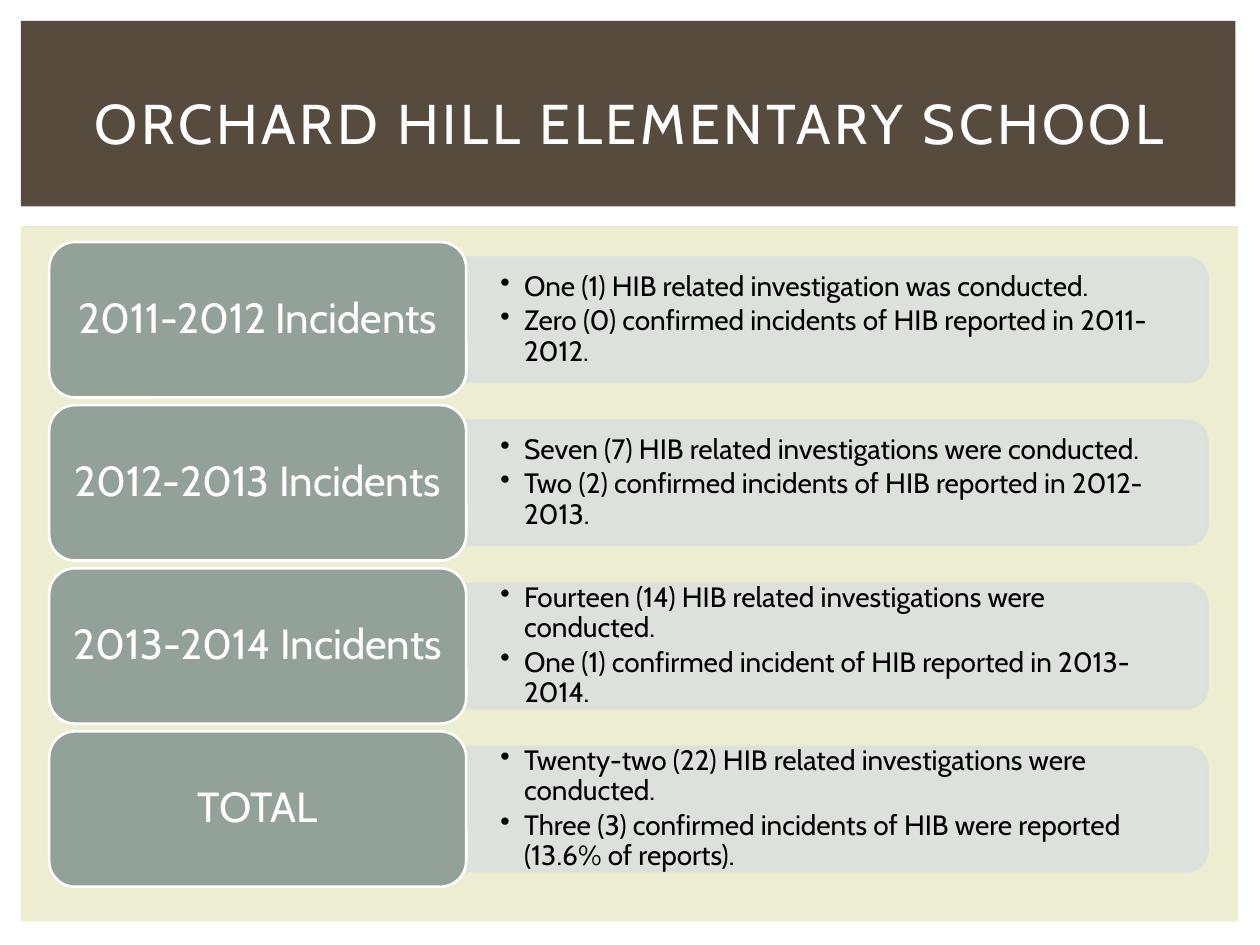
from pptx import Presentation
from pptx.dml.color import RGBColor
from pptx.enum.shapes import MSO_SHAPE
from pptx.enum.text import MSO_ANCHOR, MSO_AUTO_SIZE, PP_ALIGN
from pptx.oxml.ns import qn
from pptx.util import Pt
from lxml.etree import SubElement

THEME = {
    "font": "Cabin",
    "panel": "ECEDD1", "band": "564B3C", "card": "93A299", "bar": "DCE0DE",
    "light": "FFFFFF", "dark": "000000",
    "title": 32, "label": 24, "item": 16, "outline": 1.5,
}

ROWS = [
    ("2011-2012 Incidents", [
        "One (1) HIB related investigation was conducted.",
        "Zero (0) confirmed incidents of HIB reported in 2011-2012."]),
    ("2012-2013 Incidents", [
        "Seven (7) HIB related investigations were conducted.",
        "Two (2) confirmed incidents of HIB reported in 2012-2013."]),
    ("2013-2014 Incidents", [
        "Fourteen (14) HIB related investigations were conducted.",
        "One (1) confirmed incident of HIB reported in 2013-2014."]),
    ("TOTAL", [
        "Twenty-two (22) HIB related investigations were conducted.",
        "Three (3) confirmed incidents of HIB were reported (13.6% of reports)."]),
]


def add_box(kind, left, top, width, height, fill, line=None):
    sp = s.shapes.add_shape(kind, Pt(left), Pt(top), Pt(width), Pt(height))
    sp.shadow.inherit = False
    sp.fill.solid()
    sp.fill.fore_color.rgb = RGBColor.from_string(THEME[fill])
    if line:
        sp.line.color.rgb = RGBColor.from_string(THEME[line])
        sp.line.width = Pt(THEME["outline"])
    else:
        sp.line.fill.background()
    return sp


def write(p, text, size, color, **format_values):
    for name, value in format_values.items():
        setattr(p, name, value)
    r = p.add_run()
    r.text = text
    r.font.name = THEME["font"]
    r.font.size = Pt(THEME[size])
    r.font.color.rgb = RGBColor.from_string(THEME[color])
    return r


prs = Presentation()
prs.slide_width, prs.slide_height = Pt(720), Pt(540)
s = prs.slides.add_slide(prs.slide_layouts[5])

# Background panel and title band
add_box(MSO_SHAPE.RECTANGLE, 12, 129, 695.5, 397.5, "panel")
add_box(MSO_SHAPE.RECTANGLE, 12, 12, 694, 106, "band")

# Title, brought in front of the band
title = s.shapes.title
title.element.getparent().append(title.element)
title.left, title.top, title.width, title.height = Pt(30), Pt(28), Pt(660), Pt(83)
tf = title.text_frame
tf.auto_size = MSO_AUTO_SIZE.NONE
tf.vertical_anchor = MSO_ANCHOR.MIDDLE
r = write(tf.paragraphs[0], "ORCHARD HILL ELEMENTARY SCHOOL", "title", "light",
          alignment=PP_ALIGN.CENTER)
r.font._element.set("spc", "200")

# Rows: a label card on the left, a bar with a bulleted list on the right
card_left, card_top, card_w, card_h, pitch = 28.1, 138.3, 238.3, 88.8, 93.2
bar_left, bar_w, bar_h, list_w, list_h = 266.5, 423.5, 71, 420.5, 64
indent = Pt(13.5)

for i, (label, items) in enumerate(ROWS):
    top = card_top + i * pitch
    middle = top + card_h / 2

    # Bar, turned so that its rounded end points right
    bar = add_box(MSO_SHAPE.ROUND_2_SAME_RECTANGLE,
                  bar_left + (bar_w - bar_h) / 2, middle - bar_w / 2,
                  bar_h, bar_w, "bar", "bar")
    bar.rotation = 90
    for color in bar.element.spPr.iter(qn("a:srgbClr")):
        SubElement(color, qn("a:alpha"), val="90000")

    # List
    tb = s.shapes.add_textbox(Pt(bar_left), Pt(middle - list_h / 2), Pt(list_w), Pt(list_h))
    tf = tb.text_frame
    frame = {"word_wrap": True, "vertical_anchor": MSO_ANCHOR.MIDDLE,
             "margin_left": Pt(19.5), "margin_right": Pt(19.5),
             "margin_top": Pt(10), "margin_bottom": Pt(10)}
    for name, value in frame.items():
        setattr(tf, name, value)
    for n, item in enumerate(items):
        p = tf.add_paragraph() if n else tf.paragraphs[0]
        write(p, item, "item", "dark", level=1, alignment=PP_ALIGN.LEFT,
              line_spacing=0.9, space_after=Pt(2.4))
        pPr = p._p.get_or_add_pPr()
        pPr.set("marL", str(indent))
        pPr.set("indent", str(-indent))
        SubElement(pPr, qn("a:buChar"), char="•")

    # Label card
    card = add_box(MSO_SHAPE.ROUNDED_RECTANGLE, card_left, top, card_w, card_h, "card", "light")
    tf = card.text_frame
    tf.word_wrap = True
    tf.vertical_anchor = MSO_ANCHOR.MIDDLE
    write(tf.paragraphs[0], label, "label", "light",
          alignment=PP_ALIGN.CENTER, line_spacing=0.9)

prs.save("out.pptx")
